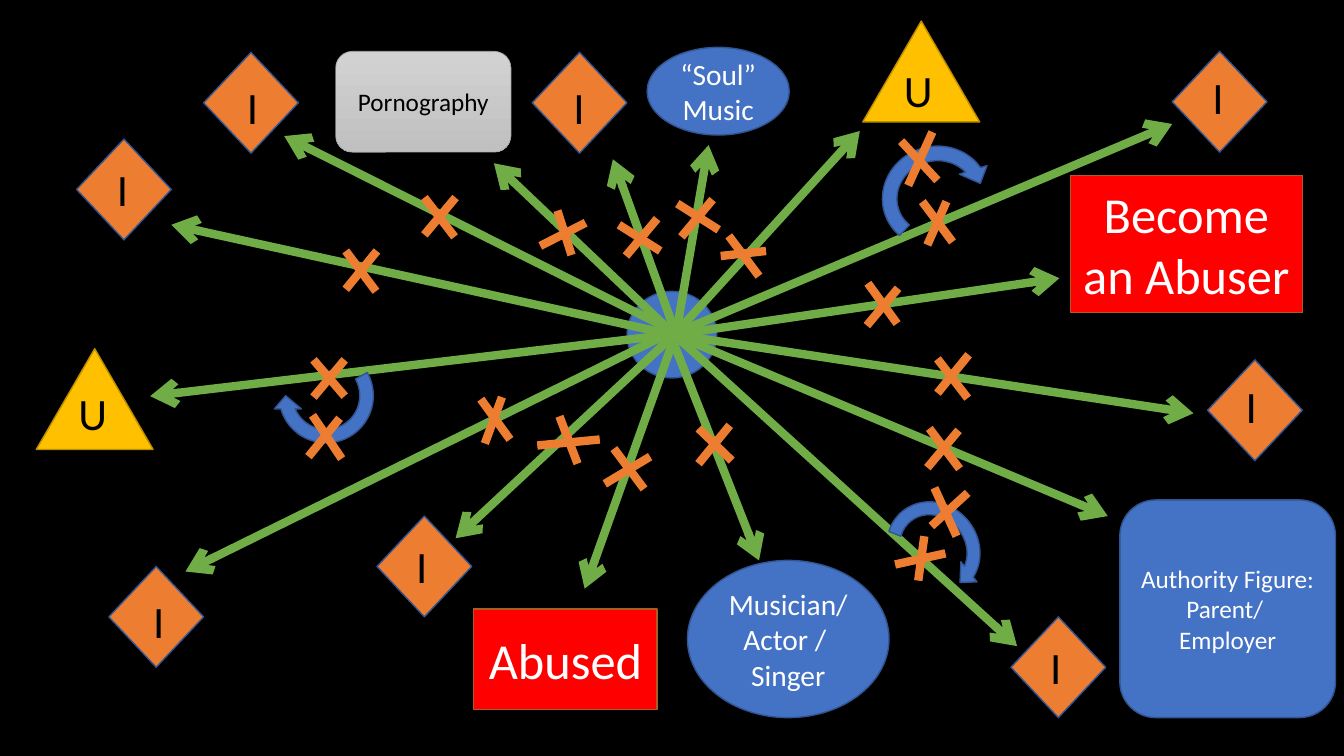
from pptx import Presentation
from pptx.dml.color import RGBColor
from pptx.enum.shapes import MSO_CONNECTOR, MSO_SHAPE
from pptx.enum.text import MSO_ANCHOR, MSO_AUTO_SIZE, PP_ALIGN
from pptx.oxml.ns import qn
from pptx.util import Pt
from lxml.etree import SubElement

SCALE = 9144
BLUE, NAVY = "4472C4", "325491"
ORANGE, RUST = "ED7D31", "AF5C24"
GOLD, BROWN = "FFC000", "BD8E00"
GREEN, RED = "70AD47", "FF0000"
BLACK, WHITE = "000000", "FFFFFF"

DIAMONDS = [
    (202, 52, 225, 74), (76, 138, 96, 156), (1198, 357, 1216, 371),
    (374, 512, 393, 530), (528, 52, 549, 74), (108, 562, 132, 584),
    (1003, 612, 1022, 630), (1163, 51, 1183, 64),
]
PEAKS = [(36, 346, 68, 378), (856, 21, 887, 57)]
RAYS = [
    (667, 332, 1163, 123), (669, 332, 452, 534), (661, 332, 184, 567),
    (667, 332, 170, 223), (669, 332, 1184, 410), (669, 332, 1009, 641),
    (669, 327, 608, 158), (665, 327, 282, 135), (669, 332, 853, 130),
    (665, 332, 149, 393), (669, 332, 1051, 276), (669, 335, 580, 584),
    (669, 342, 753, 556), (676, 335, 1099, 512), (669, 332, 490, 162),
    (672, 324, 703, 144),
]
ARCS = [(270, 339, 107, 107, 180), (868, 138, 121, 115, 342.9),
        (871, 494, 110, 102, 51.3)]
CROSSES = [
    ((311, 357, 342, 393), (342, 357, 311, 394)),
    ((310, 412, 339, 455), (337, 415, 306, 453)),
    ((374, 249, 343, 287), (373, 289, 343, 249)),
    ((581, 221, 536, 244), (567, 253, 553, 209)),
    ((452, 196, 421, 233), (451, 235, 421, 196)),
    ((652, 217, 621, 254), (655, 249, 614, 223)),
    ((645, 453, 600, 480), (639, 485, 609, 445)),
    ((724, 422, 693, 460), (726, 457, 693, 425)),
    ((938, 549, 888, 560), (911, 576, 917, 532)),
    ((951, 427, 920, 464), (952, 465, 922, 425)),
    ((961, 352, 930, 390), (960, 395, 930, 356)),
    ((891, 286, 860, 323), (890, 321, 861, 281)),
    ((481, 440, 498, 394), (506, 436, 477, 396)),
    ((573, 460, 555, 413), (595, 436, 533, 442)),
    ((760, 249, 715, 254), (753, 274, 723, 234)),
    ((945, 240, 915, 200), (920, 243, 939, 200)),
    ((930, 179, 894, 140), (901, 184, 925, 131)),
    ((924, 522, 960, 489), (949, 532, 927, 484)),
    ((713, 228, 672, 202), (707, 198, 676, 235)),
]
PANELS = [
    (MSO_SHAPE.RECTANGLE, (470, 604, 182, 100), RED, RUST, 36, ["Abused"]),
    (MSO_SHAPE.RECTANGLE, (1062, 174, 230, 136), RED, RUST, 36,
     ["Become an Abuser"]),
    (MSO_SHAPE.OVAL, (682, 556, 200, 156), BLUE, NAVY, 21,
     ["Musician/", "Actor / ", "Singer"]),
    (MSO_SHAPE.ROUNDED_RECTANGLE, (1111, 496, 214, 216), BLUE, NAVY, 18,
     ["Authority Figure: ", "Parent/ ", "Employer"]),
    (MSO_SHAPE.OVAL, (642, 47, 141, 87), BLUE, NAVY, 21,
     ["“Soul”", "Music"]),
]


def px(*sizes):
    return [round(size * SCALE) for size in sizes]


def tint(code):
    return RGBColor.from_string(code)


def write(frame, rows, size, color, align):
    frame.word_wrap = True
    for place, row in enumerate(rows):
        para = frame.add_paragraph() if place else frame.paragraphs[0]
        para.alignment = align
        run = para.add_run()
        run.text = row
        run.font.name = "Calibri"
        run.font.size = Pt(size)
        run.font.color.rgb = tint(color)


def shape(slide, kind, box, fill, edge):
    item = slide.shapes.add_shape(kind, *px(*box))
    item.shadow.inherit = False
    item.fill.solid()
    item.fill.fore_color.rgb = tint(fill)
    item.line.color.rgb = tint(edge)
    item.line.width = Pt(1)
    return item


def panel(slide, kind, box, fill, edge, size, rows, ink=WHITE):
    item = shape(slide, kind, box, fill, edge)
    item.text_frame.vertical_anchor = MSO_ANCHOR.MIDDLE
    write(item.text_frame, rows, size, ink, PP_ALIGN.CENTER)
    return item


def label(slide, left, top, text):
    frame = slide.shapes.add_textbox(*px(left, top, 64, 64)).text_frame
    frame.auto_size = MSO_AUTO_SIZE.SHAPE_TO_FIT_TEXT
    write(frame, [text], 32, BLACK, PP_ALIGN.LEFT)


def stroke(slide, ends, color, head=False):
    item = slide.shapes.add_connector(MSO_CONNECTOR.STRAIGHT, *px(*ends))
    item.line.color.rgb = tint(color)
    item.line.width = Pt(6)
    if head:
        SubElement(item.line._get_or_add_ln(), qn("a:tailEnd"), type="arrow")
    SubElement(item._element.spPr, qn("a:effectLst"))


def arc(slide, left, top, width, height, turn):
    item = shape(slide, MSO_SHAPE.CIRCULAR_ARROW,
                 (left, top, width, height), BLUE, NAVY)
    item.rotation = turn
    item.adjustments[3] = 90.39


def badge(slide):
    item = panel(slide, MSO_SHAPE.ROUNDED_RECTANGLE, (333, 51, 174, 100),
                 "C8C8C8", "A5A5A5", 18, ["Pornography"], BLACK)
    item.line.width = Pt(0.5)
    item.fill.gradient()
    item.fill.gradient_angle = 270
    for stop, code in zip(item.fill.gradient_stops, ("D2D2D2", "C0C0C0")):
        stop.color.rgb = tint(code)


def main():
    deck = Presentation()
    deck.slide_width, deck.slide_height = px(1333.33, 750)
    slide = deck.slides.add_slide(deck.slide_layouts[6])
    slide.background.fill.solid()
    slide.background.fill.fore_color.rgb = tint(BLACK)

    shape(slide, MSO_SHAPE.OVAL, (622, 289, 89, 86), BLUE, NAVY)
    for left, top, *spot in DIAMONDS:
        shape(slide, MSO_SHAPE.DIAMOND, (left, top, 94, 100), ORANGE, NAVY)
        label(slide, *spot, " I")
    for left, top, *spot in PEAKS:
        shape(slide, MSO_SHAPE.ISOSCELES_TRIANGLE, (left, top, 116, 100),
              GOLD, BROWN)
        label(slide, *spot, "U")
    for ray in RAYS:
        stroke(slide, ray, GREEN, head=True)
    for part in PANELS:
        panel(slide, *part)
    badge(slide)
    for bend in ARCS:
        arc(slide, *bend)
    for cross in CROSSES:
        for ends in cross:
            stroke(slide, ends, ORANGE)

    deck.save("out.pptx")


if __name__ == "__main__":
    main()
